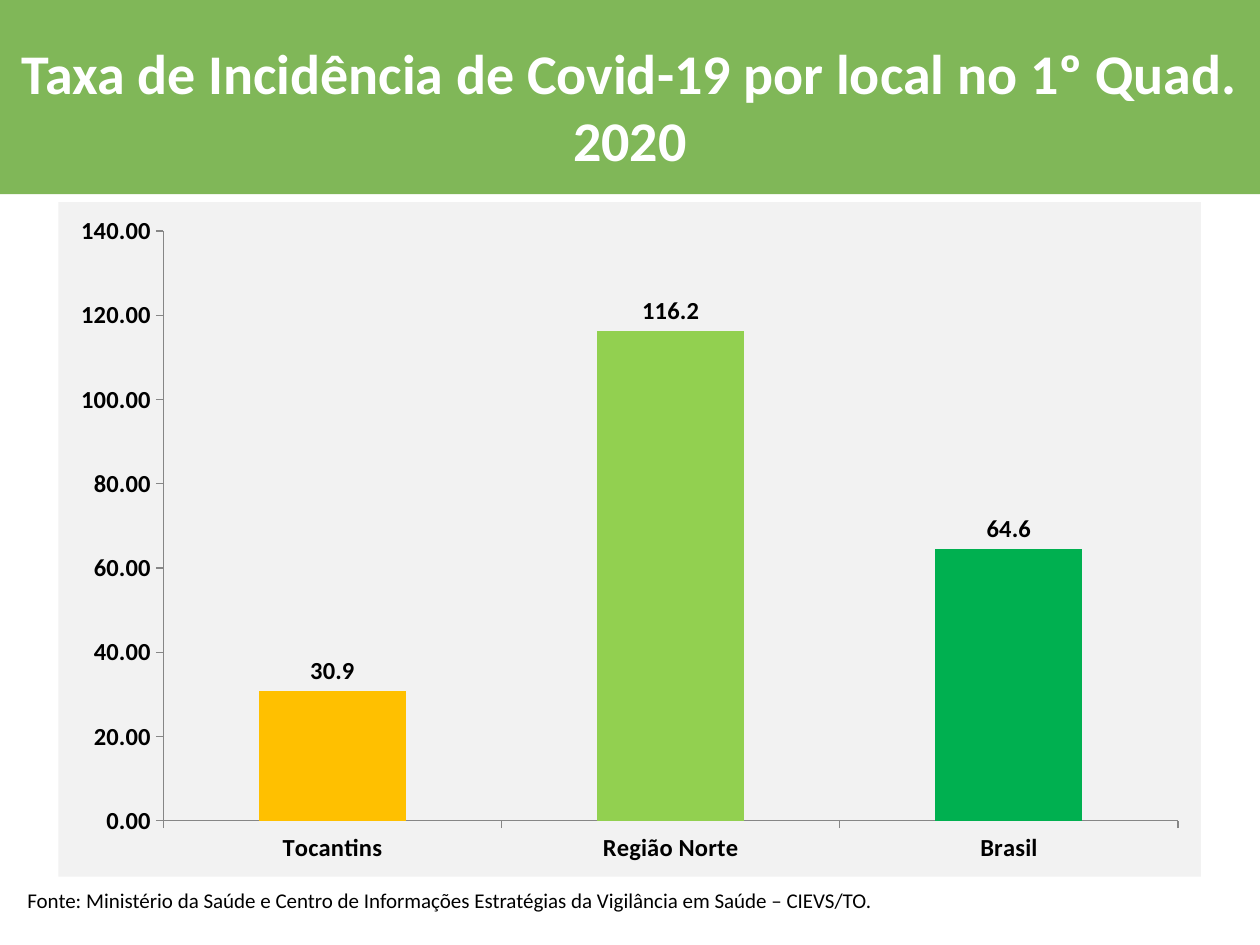
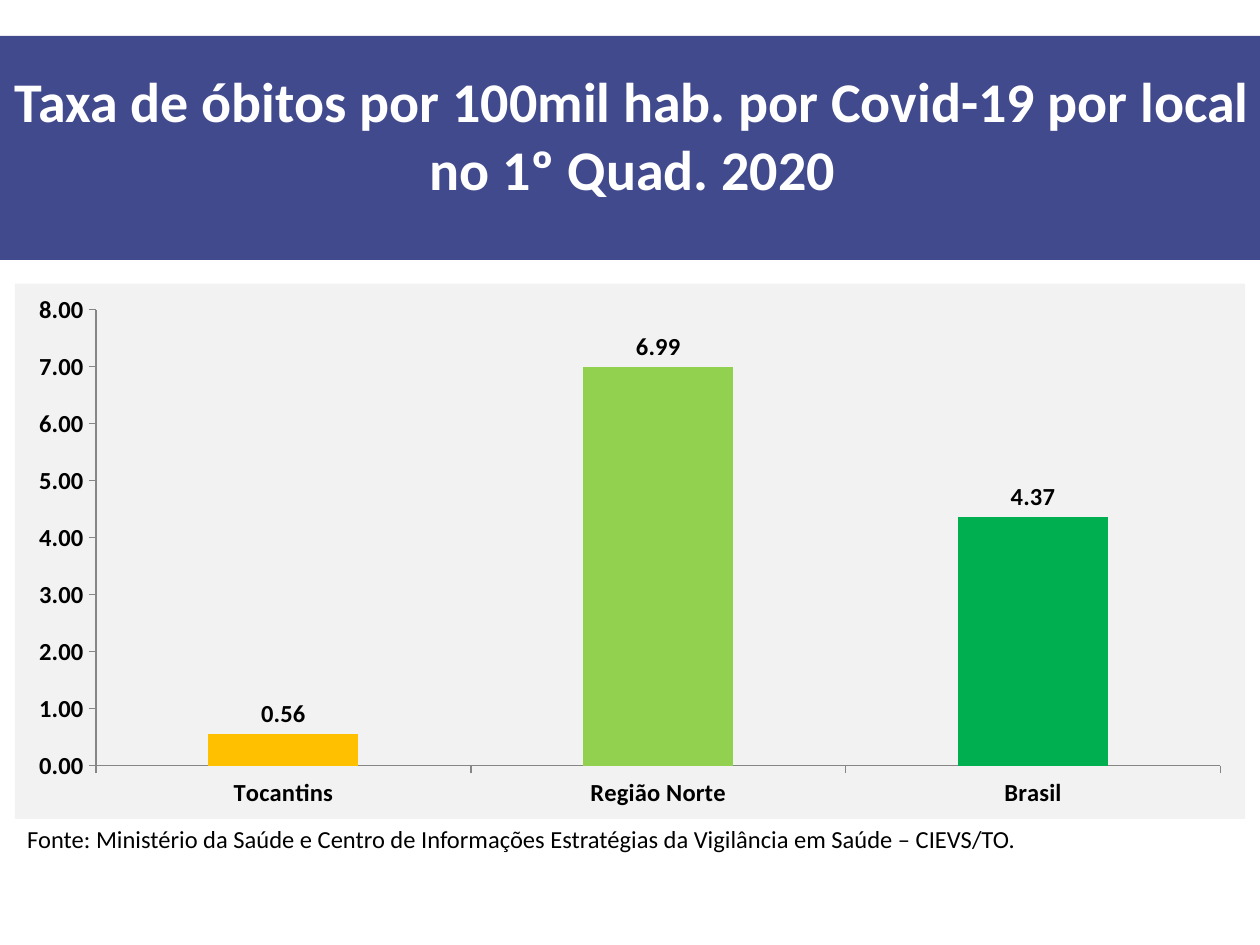
from lxml import etree
from pptx import Presentation
from pptx.chart.data import CategoryChartData
from pptx.dml.color import RGBColor
from pptx.enum.chart import XL_CHART_TYPE, XL_LABEL_POSITION, XL_TICK_MARK
from pptx.enum.shapes import MSO_SHAPE
from pptx.enum.text import PP_ALIGN
from pptx.oxml import parse_xml
from pptx.oxml.ns import nsdecls, qn
from pptx.util import Pt

COLUMNS = XL_CHART_TYPE.COLUMN_CLUSTERED
LABEL_ABOVE = XL_LABEL_POSITION.OUTSIDE_END
TICK_OUT, TICK_NONE = XL_TICK_MARK.OUTSIDE, XL_TICK_MARK.NONE
RECTANGLE = MSO_SHAPE.RECTANGLE
LEFT, CENTER = PP_ALIGN.LEFT, PP_ALIGN.CENTER

FONT = "Calibri"
COLORS = {
    "incidence": "80B758", "deaths": "424A8E", "panel": "F2F2F2",
    "axis": "868686", "black": "000000", "white": "FFFFFF",
    "Tocantins": "FFC000", "Região Norte": "92D050", "Brasil": "00B050",
}
PLACES = ["Tocantins", "Região Norte", "Brasil"]
SOURCE = ("Fonte: Ministério da Saúde e Centro de Informações Estratégias "
          "da Vigilância em Saúde – CIEVS/TO.")

# Boxes are left, top, width, height in points; plot is in fractions of the chart
RATES = [
    {"title": "Taxa de Incidência de Covid-19 por local no 1º Quad. 2020",
     "color": "incidence", "band": (0, 0, 720, 111), "title_box": (0, 21, 720, 90),
     "chart": (33.3, 115.5, 653, 385.5), "plot": (0.092, 0.043, 0.888, 0.874),
     "values": [30.9, 116.2, 64.6], "format": "0.0", "gap": 130, "top": 140, "step": 20,
     "source_box": (8.5, 503.5, 660, 22), "source_size": 12},
    {"title": "Taxa de óbitos por 100mil hab. por Covid-19 por local no 1º Quad. 2020",
     "color": "deaths", "band": (0, 20.5, 720, 128), "title_box": (3, 37.5, 717, 78.5),
     "chart": (8.5, 162, 703, 306), "plot": (0.066, 0.049, 0.914, 0.852),
     "values": [0.56, 6.99, 4.37], "format": "0.00", "gap": 150, "top": 8, "step": 1,
     "source_box": (8.5, 467.5, 698, 24.5), "source_size": 14},
]


def add_text(slide, text, box, size, color="black", bold=False, align=LEFT,
             insets=(7.2, 3.6, 7.2, 3.6), before=0):
    frame = slide.shapes.add_textbox(*map(Pt, box)).text_frame
    frame.word_wrap = True
    (frame.margin_left, frame.margin_top,
     frame.margin_right, frame.margin_bottom) = map(Pt, insets)
    paragraph = frame.paragraphs[0]
    paragraph.alignment = align
    paragraph.space_before = Pt(before)
    run = paragraph.add_run()
    run.text = text
    run.font.name, run.font.size, run.font.bold = FONT, Pt(size), bold
    run.font.color.rgb = RGBColor.from_string(COLORS[color])


def style_panel(chart, plot_box):
    """Give chart and plot the panel fill and fix the inner plot position."""
    fill = (f'<c:spPr {nsdecls("c", "a")}><a:solidFill><a:srgbClr val="{COLORS["panel"]}"/>'
            '</a:solidFill><a:ln><a:noFill/></a:ln></c:spPr>')
    chart_part = chart.element.find(qn("c:chart"))
    chart_part.addnext(parse_xml(fill))
    plot_area = chart_part.find(qn("c:plotArea"))
    plot_area.append(parse_xml(fill))
    layout = plot_area.find(qn("c:layout"))
    if layout is None:
        layout = etree.Element(qn("c:layout"))
        plot_area.insert(0, layout)
    manual = etree.SubElement(layout, qn("c:manualLayout"))
    settings = [("layoutTarget", "inner"), ("xMode", "edge"), ("yMode", "edge"),
                *zip("xywh", plot_box)]
    for tag, value in settings:
        etree.SubElement(manual, qn(f"c:{tag}")).set("val", str(value))


prs = Presentation()
prs.slide_width, prs.slide_height = Pt(720), Pt(540)

for rate in RATES:
    slide = prs.slides.add_slide(prs.slide_layouts[6])

    # Title band
    band = slide.shapes.add_shape(RECTANGLE, *map(Pt, rate["band"]))
    band.shadow.inherit = False
    band.fill.solid()
    band.fill.fore_color.rgb = RGBColor.from_string(COLORS[rate["color"]])
    band.line.fill.background()
    add_text(slide, rate["title"], rate["title_box"], 32, color="white", bold=True,
             align=CENTER, insets=(0, 0.7, 0, 0), before=0.9)

    # Column chart by place
    data = CategoryChartData(number_format="0.00")
    data.categories = PLACES
    data.add_series("Taxa", rate["values"])
    chart = slide.shapes.add_chart(COLUMNS, *map(Pt, rate["chart"]), data).chart
    chart.has_title = chart.has_legend = False
    chart.font.name, chart.font.size, chart.font.bold = FONT, Pt(14), True
    chart.font.color.rgb = RGBColor.from_string(COLORS["black"])
    style_panel(chart, rate["plot"])

    columns = chart.plots[0]
    columns.vary_by_categories = False
    columns.gap_width = rate["gap"]
    series = columns.series[0]
    for index, place in enumerate(PLACES):
        fill = series.points[index].format.fill
        fill.solid()
        fill.fore_color.rgb = RGBColor.from_string(COLORS[place])
    labels = series.data_labels
    labels.show_value = True
    labels.position = LABEL_ABOVE
    labels.number_format, labels.number_format_is_linked = rate["format"], False

    # Axes
    for axis in (chart.category_axis, chart.value_axis):
        axis.has_major_gridlines = False
        axis.major_tick_mark, axis.minor_tick_mark = TICK_OUT, TICK_NONE
        axis.format.line.width = Pt(0.75)
        axis.format.line.color.rgb = RGBColor.from_string(COLORS["axis"])
    scale = chart.value_axis
    scale.minimum_scale, scale.maximum_scale = 0, rate["top"]
    scale.major_unit = rate["step"]
    scale.tick_labels.number_format = "0.00"
    scale.tick_labels.number_format_is_linked = False

    # Source line
    add_text(slide, SOURCE, rate["source_box"], rate["source_size"])

prs.save("out.pptx")
